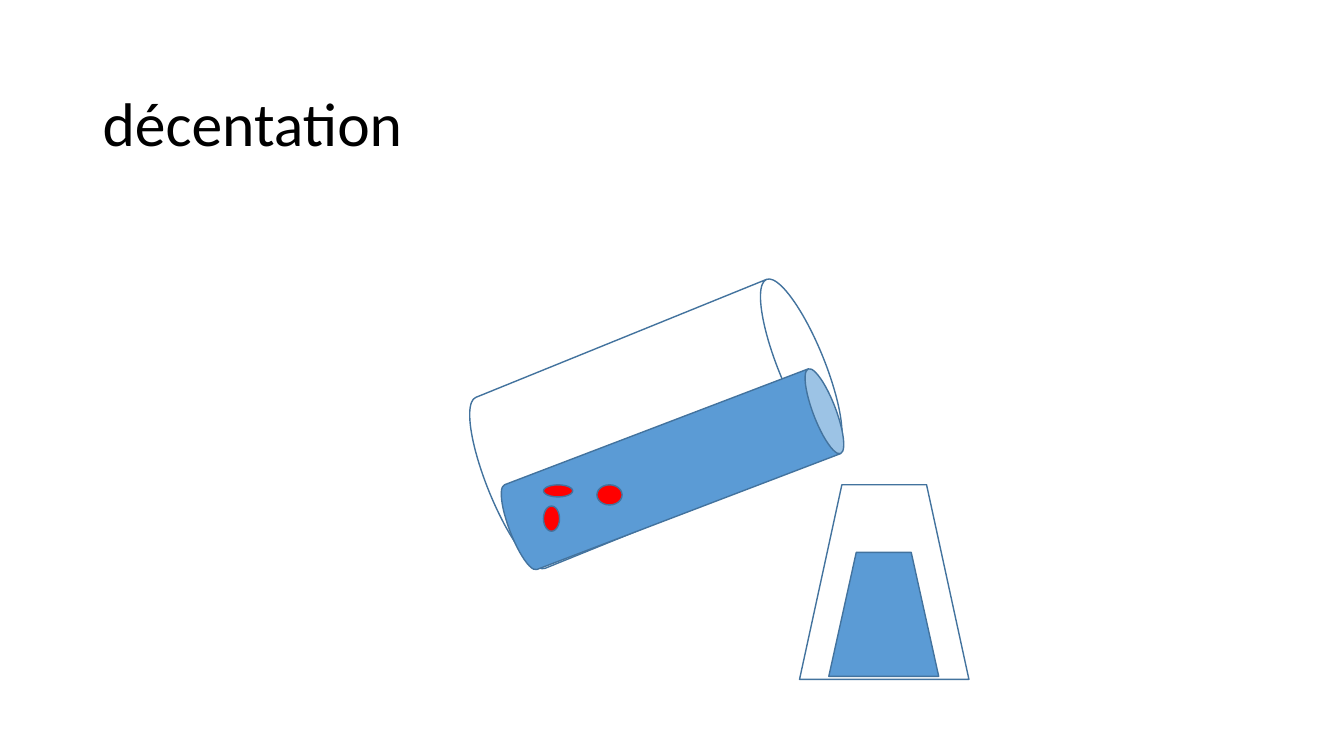
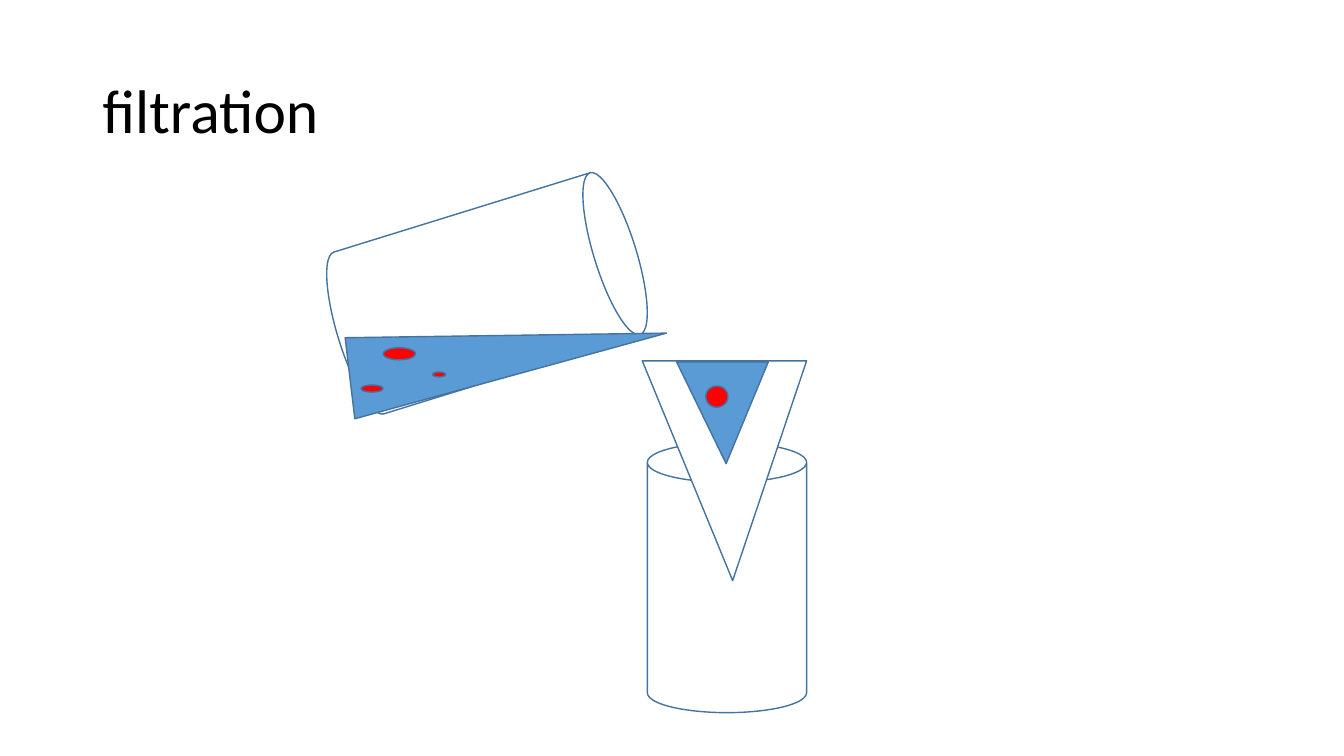
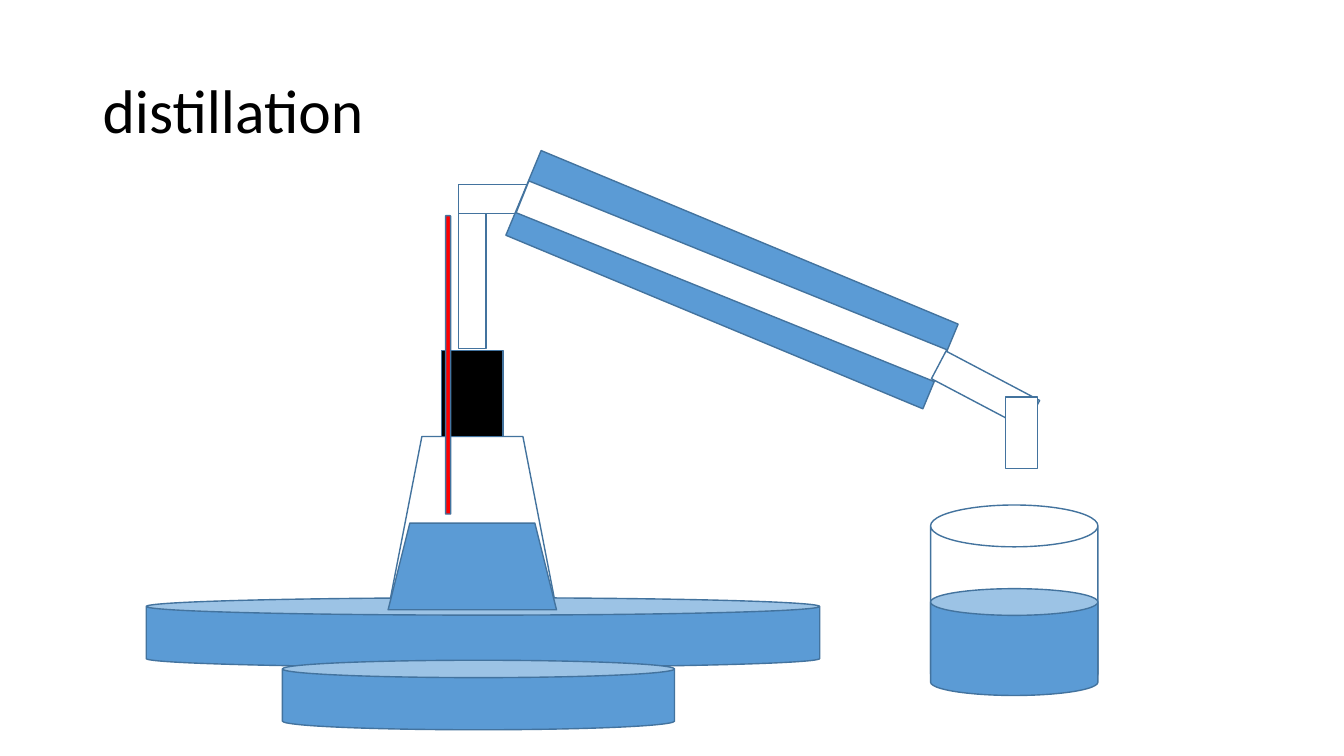
from dataclasses import dataclass

from pptx import Presentation
from pptx.dml.color import RGBColor
from pptx.enum.shapes import MSO_SHAPE
from pptx.enum.text import MSO_ANCHOR
from pptx.util import Emu, Pt

EMU_PER_PX = 9144


@dataclass(frozen=True)
class Theme:
    """Colours and type sizes shared by the slides."""
    glass: RGBColor = RGBColor(0xFF, 0xFF, 0xFF)
    liquid: RGBColor = RGBColor(0x5B, 0x9B, 0xD5)
    outline: RGBColor = RGBColor(0x43, 0x73, 0x9E)
    solid: RGBColor = RGBColor(0xFF, 0x00, 0x00)
    ink: RGBColor = RGBColor(0x00, 0x00, 0x00)
    font: str = "Calibri"
    title_size: Pt = Pt(44)
    line_width: Pt = Pt(1)
    title_spacing: float = 0.9


@dataclass(frozen=True)
class Box:
    """A region in px."""
    left: int
    top: int
    width: int
    height: int

    def inside(self, left, top, width, height):
        """Return a box placed relative to this one."""
        return Box(self.left + left, self.top + top, width, height)

    def emu(self):
        """Return left, top, width and height in EMU."""
        return [Emu(value * EMU_PER_PX)
                for value in (self.left, self.top, self.width, self.height)]


THEME = Theme()


def apply_format(target, values):
    """Set each named attribute of the target."""
    for name, value in values.items():
        setattr(target, name, value)


def add_part(slide, kind, box, fill, rotation=0, adjustment=None):
    """Add one outlined shape."""
    shape = slide.shapes.add_shape(kind, *box.emu())
    shape.shadow.inherit = False
    shape.rotation = rotation
    shape.fill.solid()
    shape.fill.fore_color.rgb = fill
    shape.line.color.rgb = THEME.outline
    shape.line.width = THEME.line_width
    if adjustment is not None:
        shape.adjustments[0] = adjustment


def add_title(slide, box, text):
    """Write the slide title."""
    frame = slide.shapes.add_textbox(*box.emu()).text_frame
    apply_format(frame, {"word_wrap": True, "vertical_anchor": MSO_ANCHOR.MIDDLE})
    paragraph = frame.paragraphs[0]
    paragraph.line_spacing = THEME.title_spacing
    run = paragraph.add_run()
    run.text = text
    apply_format(run.font, {"name": THEME.font, "size": THEME.title_size})
    run.font.color.rgb = THEME.ink


def add_particles(slide, box, particles):
    """Draw solid grains inside a region."""
    for particle in particles:
        add_part(slide, MSO_SHAPE.OVAL, box.inside(*particle), THEME.solid)


def add_decanting_beaker(slide, box):
    """Draw the tilted beaker with settled grains."""
    add_part(slide, MSO_SHAPE.CAN, box.inside(20, 0, 183, 357), THEME.glass, 67.9)
    add_part(slide, MSO_SHAPE.CAN, box.inside(83, 51, 90, 345), THEME.liquid, 69.1)
    add_particles(slide, box, [(0, 260, 16, 25), (53, 239, 25, 20), (0, 239, 29, 12)])


def add_collecting_flask(slide, box):
    """Draw the flask that takes the clear liquid."""
    add_part(slide, MSO_SHAPE.TRAPEZOID, box, THEME.glass)
    add_part(slide, MSO_SHAPE.TRAPEZOID, box.inside(29, 67, 109, 123), THEME.liquid)


def add_filter_stand(slide, box):
    """Draw the funnel standing in its jar."""
    triangle = MSO_SHAPE.ISOSCELES_TRIANGLE
    add_part(slide, MSO_SHAPE.CAN, box.inside(5, 81, 158, 268), THEME.glass)
    add_part(slide, triangle, box.inside(0, 0, 163, 218), THEME.glass, 180, 0.45)
    add_part(slide, triangle, box.inside(34, 1, 91, 101), THEME.liquid, 180, 0.46)
    add_particles(slide, box, [(63, 25, 22, 21)])


def add_pouring_beaker(slide, box):
    """Draw the tilted beaker with a wedge of cloudy liquid."""
    add_part(slide, MSO_SHAPE.CAN, box.inside(41, 0, 168, 308), THEME.glass, 72.8)
    add_part(slide, MSO_SHAPE.ISOSCELES_TRIANGLE, box.inside(106, 61, 81, 317),
             THEME.liquid, 83.2, 0.41)
    add_particles(slide, box, [(22, 208, 32, 12), (71, 232, 13, 5), (0, 245, 22, 7)])


def add_boiling_glass(slide, box):
    """Draw the empty boiling flask, its stopper and the vapour tubes."""
    add_part(slide, MSO_SHAPE.FLOWCHART_MANUAL_OPERATION,
             box.inside(0, 250, 167, 172), THEME.glass, 180)
    for place, fill in [((53, 165, 61, 85), THEME.ink),
                        ((70, 2, 27, 161), THEME.glass),
                        ((70, 0, 74, 29), THEME.glass)]:
        add_part(slide, MSO_SHAPE.FLOWCHART_PROCESS, box.inside(*place), fill)


def add_condenser(slide, box):
    """Draw the sloping condenser and its outlet."""
    for place, fill, rotation in [((0, 0, 448, 91), THEME.liquid, 22.6),
                                  ((0, 30, 447, 34), THEME.glass, 22),
                                  ((423, 139, 105, 31), THEME.glass, 27.8),
                                  ((495, 162, 32, 71), THEME.glass, 0)]:
        add_part(slide, MSO_SHAPE.FLOWCHART_PROCESS, box.inside(*place), fill, rotation)


def add_receiver(slide, box):
    """Draw the jar that gathers the distillate."""
    add_part(slide, MSO_SHAPE.CAN, box, THEME.glass)
    add_part(slide, MSO_SHAPE.CAN, box.inside(0, 83, box.width, 106), THEME.liquid)


def add_heater(slide, box):
    """Draw the hot plate on its base."""
    for place in [(0, 0, 668, 69), (135, 62, 389, 69)]:
        add_part(slide, MSO_SHAPE.CAN, box.inside(*place), THEME.liquid)


def add_boiling_contents(slide, box):
    """Draw the boiling liquid and the thermometer."""
    add_part(slide, MSO_SHAPE.TRAPEZOID, box.inside(0, 305, 167, 86), THEME.liquid)
    add_part(slide, MSO_SHAPE.ROUND_1_RECTANGLE, box.inside(57, 0, 5, 296), THEME.solid)


SLIDES = [
    ("décentation", 53, [
        (add_decanting_beaker, Box(539, 242, 305, 396)),
        (add_collecting_flask, Box(793, 481, 168, 193)),
    ]),
    ("filtration", 40, [
        (add_filter_stand, Box(637, 358, 163, 349)),
        (add_pouring_beaker, Box(358, 137, 304, 378)),
    ]),
    ("distillation", 40, [
        (add_boiling_glass, Box(385, 183, 167, 422)),
        (add_condenser, Box(502, 232, 528, 233)),
        (add_receiver, Box(923, 501, 166, 188)),
        (add_heater, Box(145, 593, 668, 131)),
        (add_boiling_contents, Box(385, 214, 167, 391)),
    ]),
]


def main():
    """Build and save the presentation."""
    presentation = Presentation()
    page = Box(0, 0, 1333, 750).emu()
    apply_format(presentation, {"slide_width": page[2], "slide_height": page[3]})
    for title, title_top, regions in SLIDES:
        slide = presentation.slides.add_slide(presentation.slide_layouts[6])
        add_title(slide, Box(92, title_top, 1150, 145), title)
        for draw_region, box in regions:
            draw_region(slide, box)
    presentation.save("out.pptx")


if __name__ == "__main__":
    main()
